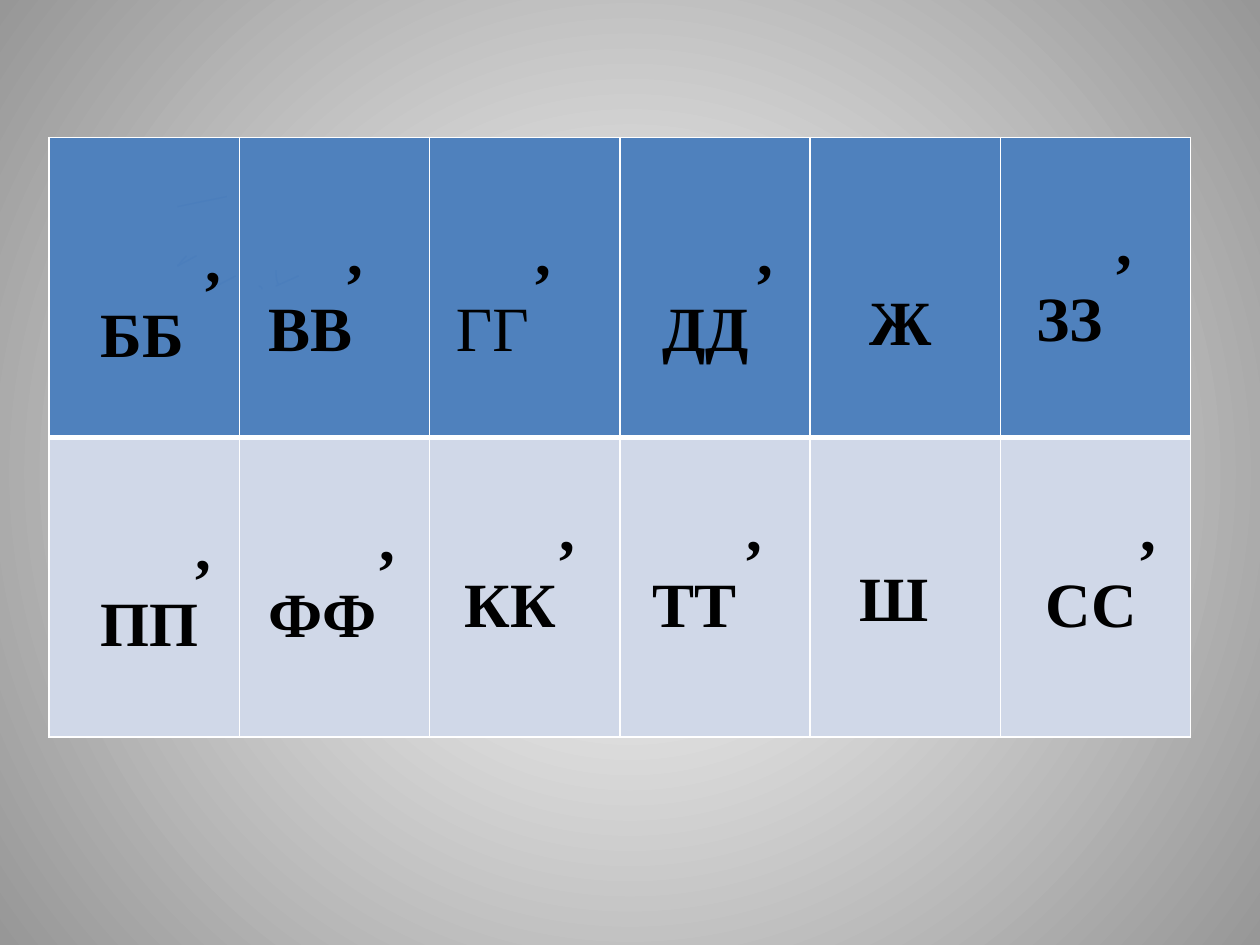
from pptx import Presentation
from pptx import util as u
from pptx.dml.color import RGBColor
from pptx.enum import shapes, text
from pptx.oxml import parse_xml
from pptx.oxml.ns import nsdecls, qn

FONT = "Times New Roman"
BLUE, PALE, STROKE = "4F81BD", "D0D8E8", "4B7EBC"
TABLE_LEFT, TABLE_TOP, COLUMN, ROW = 0.39, 1.09, 1.51, 2.38

LETTERS = [
    ("ВВ", 2.03, 1.64, 1.25, 1.92, 0.63, True),
    ("ГГ", 3.52, 1.64, 0.96, 1.31, 0.63, False),
    ("ДД", 5.16, 1.64, 1.09, 1.31, 0.75, True),
    ("Ж", 6.8, 2.19, 0.7, 0.71, None, True),
    ("ЗЗ", 8.13, 1.56, 0.96, 1.31, 0.63, True),
    ("ПП", 0.7, 3.98, 1.09, 1.31, 0.75, True),
    ("ФФ", 2.03, 3.91, 1.21, 1.31, 0.88, True),
    ("КК", 3.59, 3.83, 1.09, 1.31, 0.75, True),
    ("ТТ", 5.08, 3.83, 1.09, 1.31, 0.75, True),
    ("Ш", 6.72, 4.38, 0.76, 0.71, None, True),
    ("СС", 8.2, 3.83, 1.09, 1.31, 0.75, True),
]
STROKES = [
    (2.19, 2.27, 2.37, 2.19),
    (1.41, 2.11, 1.56, 2.03),
    (1.41, 2.11, 1.48, 2.03),
    (1.72, 2.27, 1.87, 2.19),
    (1.41, 1.64, 1.8, 1.56),
]


def color(value):
    return RGBColor.from_string(value)


def set_background(page):
    fill = page.background.fill
    fill.gradient()
    for stop, position, value in zip(fill.gradient_stops, (0, 1), ("FFFFFF", "979797")):
        stop.position = position
        stop.color.rgb = color(value)
    gradient = page.background._cSld.bg.find(".//" + qn("a:gradFill"))
    gradient.replace(gradient.find(qn("a:lin")), parse_xml(
        f'<a:path {nsdecls("a")} path="circle">'
        '<a:fillToRect l="50000" t="50000" r="50000" b="50000"/></a:path>'))


def set_borders(cell, **widths):
    properties = cell._tc.get_or_add_tcPr()
    for index, side in enumerate("LRTB"):
        width = u.Pt(widths.get(side, 1))
        properties.insert(index, parse_xml(
            f'<a:ln{side} {nsdecls("a")} w="{width}"><a:solidFill>'
            f'<a:srgbClr val="FFFFFF"/></a:solidFill></a:ln{side}>'))


def add_grid(page):
    frame = page.shapes.add_table(
        2, 6, u.Inches(TABLE_LEFT), u.Inches(TABLE_TOP),
        u.Inches(COLUMN * 6), u.Inches(ROW * 2))
    grid = frame.table
    for column in grid.columns:
        column.width = u.Inches(COLUMN)
    for row, value, widths in zip(grid.rows, (BLUE, PALE), ({"B": 3}, {"T": 3})):
        row.height = u.Inches(ROW)
        for cell in row.cells:
            cell.fill.solid()
            cell.fill.fore_color.rgb = color(value)
            set_borders(cell, **widths)


def add_span(para, words, size=36, bold=True):
    para.alignment = text.PP_ALIGN.LEFT
    span = para.add_run()
    span.text = words
    span.font.name = FONT
    span.font.size = u.Pt(size)
    span.font.bold = bold
    span.font.color.rgb = color("000000")


def write_letters(box, letters, indent=None, bold=True, wrap=False,
                  anchor=text.MSO_ANCHOR.TOP):
    frame = box.text_frame
    frame.word_wrap = wrap
    frame.vertical_anchor = anchor
    para = frame.paragraphs[0]
    if indent is not None:
        para._p.get_or_add_pPr().set("marL", str(u.Inches(indent)))
        add_span(para, ",")
        para = frame.add_paragraph()
    add_span(para, letters, bold=bold)


def add_arc(page, left, top, width, height, flipped=False):
    arc = page.shapes.add_shape(
        shapes.MSO_SHAPE.ARC, *map(u.Inches, (left, top, width, height)))
    arc.shadow.inherit = False
    arc.fill.background()
    arc.line.color.rgb = color(STROKE)
    arc.line.width = u.Pt(0.75)
    if flipped:
        transform = arc._element.spPr.find(qn("a:xfrm"))
        transform.set("flipH", "1")
        transform.set("flipV", "1")


def add_stroke(page, *ends):
    stroke = page.shapes.add_connector(
        shapes.MSO_CONNECTOR.STRAIGHT, *map(u.Inches, ends))
    stroke.line.color.rgb = color(STROKE)
    stroke.line.width = u.Pt(0.75)
    stroke._element.spPr.append(parse_xml(f'<a:effectLst {nsdecls("a")}/>'))


def add_framed_letters(page):
    box = page.shapes.add_shape(
        shapes.MSO_SHAPE.RECTANGLE, *map(u.Inches, (0.7, 1.48, 1.17, 1.51)))
    box.shadow.inherit = False
    box.fill.background()
    box.line.color.rgb = color(BLUE)
    box.line.width = u.Pt(0.75)
    write_letters(box, "ББ", 0.83, wrap=True, anchor=text.MSO_ANCHOR.BOTTOM)


def main():
    deck = Presentation()
    deck.slide_width, deck.slide_height = u.Inches(10), u.Inches(7.5)
    page = deck.slides.add_slide(deck.slide_layouts[6])
    set_background(page)
    add_grid(page)
    add_arc(page, 2.19, 2.03, 0.05, 0.23, flipped=True)
    add_arc(page, 2.03, 2.27, 0.05, 0.05)
    add_framed_letters(page)
    for ends in STROKES:
        add_stroke(page, *ends)
    for letters, left, top, width, height, indent, bold in LETTERS:
        box = page.shapes.add_textbox(*map(u.Inches, (left, top, width, height)))
        write_letters(box, letters, indent, bold, wrap=letters == "ВВ")
    deck.save("out.pptx")


if __name__ == "__main__":
    main()
